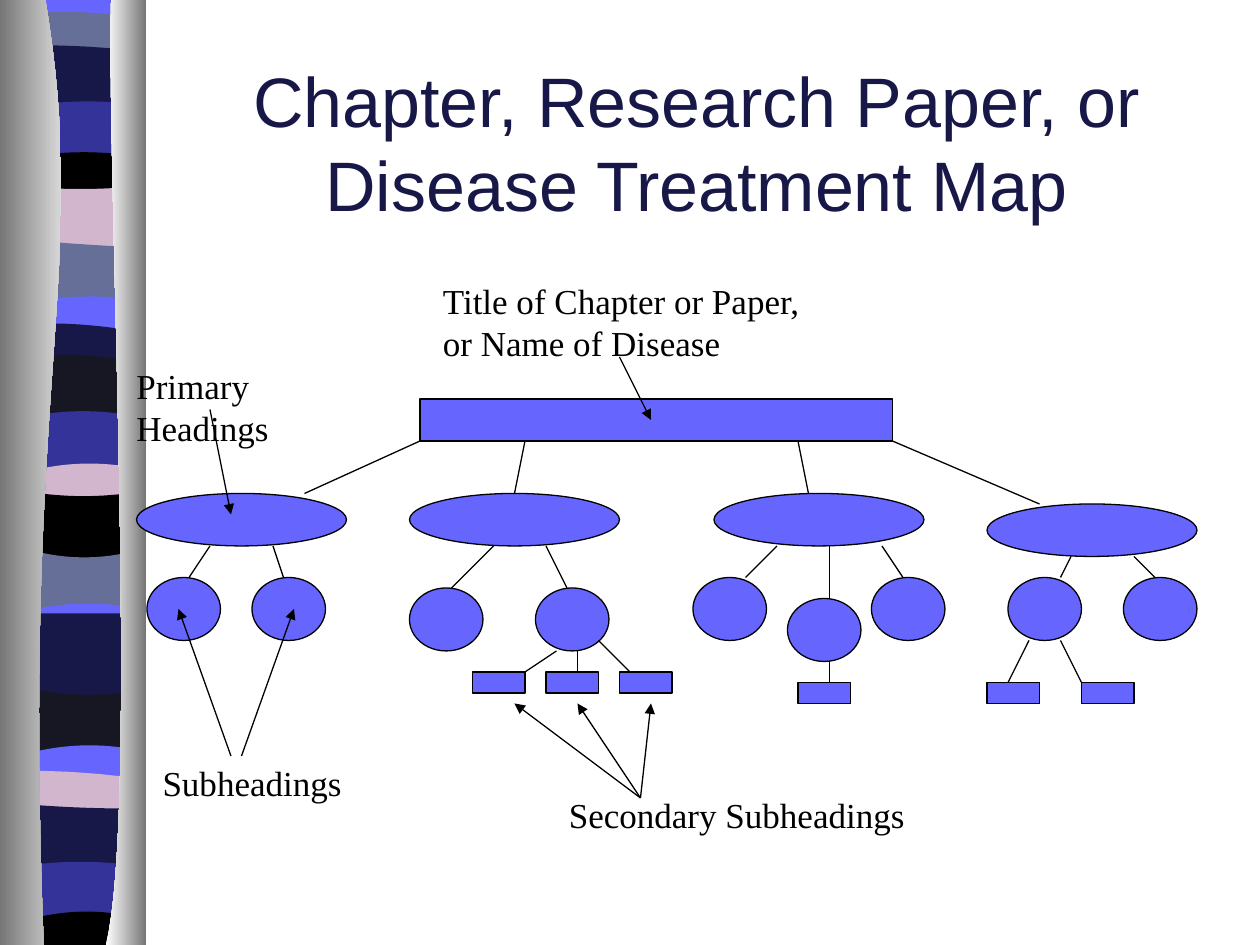
from dataclasses import dataclass

from lxml.etree import SubElement
from pptx import Presentation
from pptx.dml.color import RGBColor as Color
from pptx.enum.shapes import MSO_CONNECTOR as Connector, MSO_SHAPE as Preset
from pptx.enum.text import MSO_ANCHOR as Anchor, PP_ALIGN as Align
from pptx.oxml.ns import qn
from pptx.util import Pt


@dataclass(frozen=True)
class Theme:
    blue: str = "6666FF"
    slate: str = "656F97"
    navy: str = "181848"
    indigo: str = "333399"
    pink: str = "D2B6CE"
    ink: str = "171723"
    black: str = "000000"
    white: str = "FFFFFF"
    silver: str = "D8D8D8"
    gray: str = "767676"
    title_font: str = "Arial"
    label_font: str = "Times New Roman"
    title_size: float = 40
    label_size: float = 20
    leading: float = 1.2
    line_width: float = 0.75


def set_all(target, values):
    for name, value in values.items():
        setattr(target, name, value)


def bezier(start, first, second, end, steps=32):
    points = []
    for step in range(steps + 1):
        t = step / steps
        weights = ((1 - t) ** 3, 3 * t * (1 - t) ** 2, 3 * t * t * (1 - t), t ** 3)
        points.append(tuple(
            sum(weight * point[axis] for weight, point in zip(weights, (start, first, second, end)))
            for axis in (0, 1)
        ))
    return points


def wave(left, middle, right, start, end, steps=12):
    points = []
    for step in range(steps + 1):
        t = step / steps
        y = left * (1 - t) * (1 - 2 * t) + middle * 4 * t * (1 - t) + right * t * (2 * t - 1)
        points.append((start + (end - start) * t, y))
    return points


class SlideBuilder:
    def __init__(self, page, theme):
        self.page = page
        self.theme = theme

    def set_text(self, frame, text, font, size, color, align):
        frame.text = text
        para = frame.paragraphs[0]
        set_all(para, {"alignment": align, "line_spacing": Pt(size * self.theme.leading),
                       "space_before": Pt(0)})
        span = para.runs[0]
        set_all(span.font, {"name": font, "size": Pt(size), "bold": False})
        span.font.color.rgb = Color.from_string(color)

    def title(self, text, left, top, width, height):
        box = self.page.shapes.title
        set_all(box, {"left": Pt(left), "top": Pt(top), "width": Pt(width), "height": Pt(height)})
        set_all(box.text_frame, {"vertical_anchor": Anchor.MIDDLE, "word_wrap": True})
        theme = self.theme
        self.set_text(box.text_frame, text, theme.title_font, theme.title_size, theme.navy, Align.CENTER)

    def label(self, text, left, top, width, height):
        box = self.page.shapes.add_textbox(Pt(left), Pt(top), Pt(width), Pt(height))
        box.text_frame.word_wrap = True
        theme = self.theme
        self.set_text(box.text_frame, text, theme.label_font, theme.label_size, theme.black, Align.LEFT)

    def node(self, preset, left, top, width, height):
        shape = self.page.shapes.add_shape(preset, Pt(left), Pt(top), Pt(width), Pt(height))
        shape.shadow.inherit = False
        shape.fill.solid()
        shape.fill.fore_color.rgb = Color.from_string(self.theme.blue)
        shape.line.color.rgb = Color.from_string(self.theme.black)
        shape.line.width = Pt(self.theme.line_width)
        return shape

    def outline(self, points, colors):
        scaled = [(Pt(x), Pt(y)) for x, y in points]
        builder = self.page.shapes.build_freeform(*scaled[0])
        builder.add_line_segments(scaled[1:], close=True)
        shape = builder.convert_to_shape()
        shape.shadow.inherit = False
        shape.line.fill.background()
        if len(colors) == 1:
            shape.fill.solid()
            shape.fill.fore_color.rgb = Color.from_string(colors[0])
        else:
            shape.fill.gradient()
            shape.fill.gradient_angle = 0
            for stop, color in zip(shape.fill.gradient_stops, colors):
                stop.color.rgb = Color.from_string(color)

    def line(self, x1, y1, x2, y2, arrow=False):
        link = self.page.shapes.add_connector(Connector.STRAIGHT, Pt(x1), Pt(y1), Pt(x2), Pt(y2))
        link.line.color.rgb = Color.from_string(self.theme.black)
        link.line.width = Pt(self.theme.line_width)
        properties = link._element.spPr
        if arrow:
            SubElement(properties.get_or_add_ln(), qn("a:tailEnd"), type="triangle")
        SubElement(properties, qn("a:effectLst"))
        return link


def draw_ribbon(builder, theme, bottom):
    bands = [
        (theme.blue, 0, 0, 0), (theme.slate, 7, 7, 9), (theme.navy, 26, 26.5, 28.5),
        (theme.indigo, 60, 58, 59), (theme.black, 89, 87, 88.5), (theme.pink, 107, 108, 107),
        (theme.slate, 137.5, 139.5, 141), (theme.blue, 172, 169.5, 170.5),
        (theme.navy, 185, 185.5, 188.5), (theme.ink, 203, 203, 206),
        (theme.indigo, 237.5, 235, 237), (theme.pink, 268.5, 265, 266.5),
        (theme.black, 281.5, 283.5, 282), (theme.slate, 315, 318.5, 316),
        (theme.blue, 348, 345, 346.5), (theme.navy, 350.5, 350.5, 350.5),
        (theme.ink, 394, 397, 395.5), (theme.blue, 429.5, 426, 427.5),
        (theme.pink, 440.5, 441.5, 444), (theme.navy, 460, 461.5, 462),
        (theme.indigo, 494, 492.5, 494), (theme.black, 524.5, 521, 523),
    ]
    left, right = 20, 72
    for color, *levels in bands:
        builder.outline(wave(*levels, left, right) + [(right, bottom), (left, bottom)], [color])
    inner = bezier((26, 0), (52, 156), (12, 213), (25, bottom))
    builder.outline(inner + [(0, bottom), (0, 0)], [theme.gray, theme.silver])
    outer = bezier((63.5, 0), (60.5, 90), (80, 465), (60.5, bottom))
    builder.outline(outer + [(83.5, bottom), (83.5, 0)], [theme.white, theme.gray])


def draw_map(builder):
    builder.node(Preset.RECTANGLE, 240, 228, 270, 24)
    headings = [builder.node(Preset.OVAL, left, top, 120, 30)
                for left, top in [(78, 282), (234, 282), (408, 282), (564, 288)]]
    for left, top in [(84, 330), (144, 330), (234, 336), (306, 336), (396, 330),
                      (450, 342), (498, 330), (576, 330), (642, 330)]:
        builder.node(Preset.OVAL, left, top, 42, 36)
    for left, top in [(270, 384), (312, 384), (354, 384), (456, 390), (564, 390), (618, 390)]:
        builder.node(Preset.RECTANGLE, left, top, 30, 12)

    builder.line(300, 252, 294, 282).end_connect(headings[1], 0)
    branches = [
        (240, 252, 174, 282), (456, 252, 462, 282), (510, 252, 594, 288),
        (120, 312, 108, 330), (156, 312, 162, 330), (282, 312, 258, 336),
        (312, 312, 324, 336), (444, 312, 426, 330), (474, 312, 474, 342),
        (504, 312, 516, 330), (612, 318, 606, 330), (648, 318, 660, 330),
        (318, 372, 300, 384), (330, 372, 330, 384), (342, 366, 360, 384),
        (474, 378, 474, 390), (588, 366, 576, 390), (606, 366, 618, 390),
    ]
    for branch in branches:
        builder.line(*branch)


def draw_labels(builder):
    builder.label("Title of Chapter or Paper, or Name of Disease", 246, 156, 234, 56)
    builder.label("Primary Headings", 70.8, 205, 110, 56)
    builder.label("Subheadings", 85.8, 431.5, 208, 31)
    builder.label("Secondary Subheadings", 318, 450, 208, 31)
    pointers = [(354, 204, 372, 240), (120, 234, 132, 294),
                (132, 432, 102, 348), (138, 432, 168, 348)]
    pointers += [(366, 456, x, 402) for x in (294, 330, 372)]
    for pointer in pointers:
        builder.line(*pointer, arrow=True)


def main():
    deck = Presentation()
    set_all(deck, {"slide_width": Pt(720), "slide_height": Pt(540)})
    theme = Theme()
    builder = SlideBuilder(deck.slides.add_slide(deck.slide_layouts[5]), theme)
    draw_ribbon(builder, theme, 540)
    builder.title("Chapter, Research Paper, or Disease Treatment Map", 92, 36, 612, 90)
    draw_map(builder)
    draw_labels(builder)
    deck.save("out.pptx")


if __name__ == "__main__":
    main()
